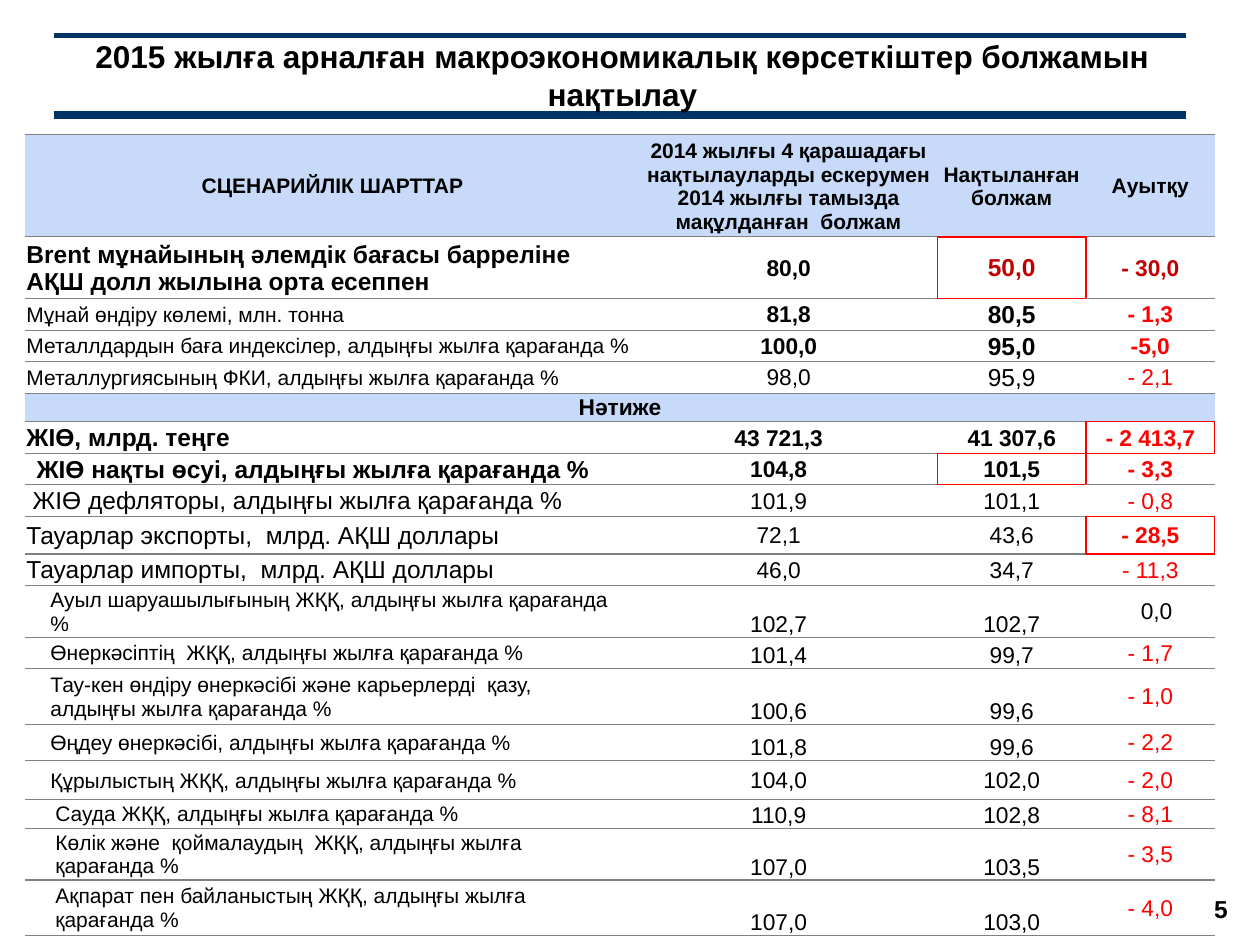
"""Build the slide with the refined 2015 macroeconomic forecast table."""
from lxml.etree import SubElement
from pptx import Presentation
from pptx.dml.color import RGBColor
from pptx.enum.shapes import MSO_CONNECTOR, MSO_SHAPE
from pptx.enum.text import MSO_ANCHOR, PP_ALIGN
from pptx.oxml import parse_xml
from pptx.oxml.ns import nsdecls, qn
from pptx.util import Inches, Pt

NAVY, PALE, WHITE, BLACK = "003366", "C7DAF9", "FFFFFF", "000000"
GREY, RED, DARK_RED = "808080", "FF0000", "C00000"
MIDDLE, BOTTOM = MSO_ANCHOR.MIDDLE, MSO_ANCHOR.BOTTOM


def paint(target, color):
    if hasattr(target, "solid"):
        target.solid()
        target = target.fore_color
    else:
        target = target.color
    target.rgb = RGBColor.from_string(color)


def write(tf, text, size, bold, color=BLACK, align=PP_ALIGN.CENTER):
    tf.text = text
    tf.word_wrap = True
    for p in tf.paragraphs:
        p.alignment = align
        p.font.name, p.font.size, p.font.bold = "Arial", Pt(size), bold
        paint(p.font, color)


prs = Presentation()
prs.slide_width, prs.slide_height = Inches(10), Inches(7.5)
u = prs.slide_width // 1000
s = prs.slides.add_slide(prs.slide_layouts[6])

for y, width in ((91, 4.5), (28, 3)):
    line = s.shapes.add_connector(MSO_CONNECTOR.STRAIGHT, 941 * u, y * u, 43 * u, y * u)
    line.line.width = Pt(width)
    paint(line.line, NAVY)
    SubElement(line._element.spPr, qn("a:effectLst"))

number = s.shapes.add_shape(MSO_SHAPE.RECTANGLE, 939 * u, 694 * u, 60 * u, 55 * u)
number.shadow.inherit = False
number.line.fill.background()
paint(number.fill, WHITE)
number.text_frame.vertical_anchor = MIDDLE
write(number.text_frame, "5", 14, True)

title = s.shapes.add_textbox(43 * u, 31 * u, 902 * u, 57 * u)
title.text_frame.vertical_anchor = MIDDLE
write(title.text_frame,
      "2015 жылға арналған макроэкономикалық көрсеткіштер болжамын нақтылау", 18, True)

columns = [472, 16, 236, 118, 102]
rows = [
    (80, 1, 12, True, True, MIDDLE, "СЦЕНАРИЙЛІК ШАРТТАР",
     ("2014 жылғы 4 қарашадағы нақтылауларды ескерумен 2014 жылғы тамызда мақұлданған  болжам",
      "Нақтыланған\nболжам", "Ауытқу")),
    (49, 1, 14, True, True, MIDDLE,
     "Brent мұнайының әлемдік бағасы барреліне\vАҚШ долл жылына орта есеппен",
     ("80,0", "50,0", "- 30,0")),
    (25, 1, 12, False, True, MIDDLE, "Мұнай өндіру көлемі, млн. тонна",
     ("81,8", "80,5", "- 1,3")),
    (25, 1, 12, False, True, MIDDLE, "Металлдардын баға индексілер, алдыңғы жылға қарағанда %",
     ("100,0", "95,0", "-5,0")),
    (25, 1, 12, False, False, MIDDLE, "Металлургиясының ФКИ, алдыңғы жылға қарағанда %",
     ("98,0", "95,9", "- 2,1")),
    (22, 1, 13, True, True, MIDDLE, "Нәтиже", ()),
    (25, 1, 14, True, True, MIDDLE, "ЖІӨ, млрд. теңге",
     ("43 721,3", "41 307,6", "- 2 413,7")),
    (25, 9, 14, True, True, MIDDLE, "ЖІӨ нақты өсуі, алдыңғы жылға қарағанда %",
     ("104,8", "101,5", "- 3,3")),
    (25, 6, 14, False, False, MIDDLE, "ЖІӨ дефляторы, алдыңғы жылға қарағанда %",
     ("101,9", "101,1", "- 0,8")),
    (30, 1, 14, False, False, MIDDLE, "Тауарлар экспорты,  млрд. АҚШ доллары",
     ("72,1", "43,6", "- 28,5")),
    (25, 1, 14, False, False, MIDDLE, "Тауарлар импорты,  млрд. АҚШ доллары",
     ("46,0", "34,7", "- 11,3")),
    (35, 20, 12, False, False, BOTTOM, "Ауыл шаруашылығының ЖҚҚ, алдыңғы жылға қарағанда %",
     ("102,7", "102,7", "0,0")),
    (25, 20, 12, False, False, BOTTOM, "Өнеркәсіптің  ЖҚҚ, алдыңғы жылға қарағанда %",
     ("101,4", "99,7", "- 1,7")),
    (44, 20, 12, False, False, BOTTOM,
     "Тау-кен өндіру өнеркәсібі және карьерлерді  қазу,\nалдыңғы жылға қарағанда %",
     ("100,6", "99,6", "- 1,0")),
    (29, 20, 12, False, False, BOTTOM, "Өңдеу өнеркәсібі, алдыңғы жылға қарағанда %",
     ("101,8", "99,6", "- 2,2")),
    (31, 20, 12, False, False, MIDDLE, "Құрылыстың ЖҚҚ, алдыңғы жылға қарағанда %",
     ("104,0", "102,0", "- 2,0")),
    (22, 24, 12, False, False, BOTTOM, "Сауда ЖҚҚ, алдыңғы жылға қарағанда %",
     ("110,9", "102,8", "- 8,1")),
    (29, 24, 12, False, False, BOTTOM,
     "Көлік және  қоймалаудың  ЖҚҚ, алдыңғы жылға\nқарағанда %",
     ("107,0", "103,5", "- 3,5")),
    (44, 24, 12, False, False, BOTTOM,
     "Ақпарат пен байланыстың ЖҚҚ, алдыңғы жылға\nқарағанда %",
     ("107,0", "103,0", "- 4,0")),
]
header, brent, result = 0, 1, 5
boxed = {(1, 3), (6, 4), (7, 3), (9, 4)}
sides = {"L": (0, -1), "R": (0, 1), "T": (-1, 0), "B": (1, 0)}

table = s.shapes.add_table(len(rows), len(columns), 20 * u, 107 * u, sum(columns) * u,
                           sum(row[0] for row in rows) * u).table
table.first_row = table.horz_banding = False
for c, width in enumerate(columns):
    table.columns[c].width = width * u

for r, (height, indent, size, label_bold, bold, anchor, label, values) in enumerate(rows):
    table.rows[r].height = height * u
    for c in range(len(columns)):
        cell = table.cell(r, c)
        paint(cell.fill, PALE if r in (header, result) else WHITE)
        cell.vertical_anchor = MIDDLE
        cell.margin_left = cell.margin_right = cell.margin_top = u
        cell.margin_bottom = 0
        for i, (side, (dr, dc)) in enumerate(sides.items()):
            red = (r, c) in boxed or (r + dr, c + dc) in boxed
            color, width = (RED, 1) if red else (GREY, 0.75)
            fill = f'<a:solidFill><a:srgbClr val="{color}"/></a:solidFill>'
            if side in "LR" and not red:
                fill = "<a:noFill/>"
            cell._tc.tcPr.insert(i, parse_xml(
                f'<a:ln{side} {nsdecls("a")} w="{Pt(width)}">{fill}</a:ln{side}>'))

    first, last = (0, 4) if r == result else (0, 1) if r < result else (1, 2)
    table.cell(r, first).merge(table.cell(r, last))
    cell = table.cell(r, 0)
    cell.margin_left = indent * u
    align = PP_ALIGN.CENTER if r in (header, result) else PP_ALIGN.LEFT
    write(cell.text_frame, label, size, label_bold, BLACK, align)

    for c, value in zip((2 if r < result else 1, 3, 4), values):
        cell = table.cell(r, c)
        size = 12 if r == header else 14 if c == 3 and r < result else 13
        color = BLACK
        if r == brent and c > 2:
            color = DARK_RED
        elif c == 4 and value.startswith("-"):
            color = RED
        if c < 4:
            cell.vertical_anchor = anchor
        elif value == "0,0":
            cell.margin_left = 11 * u
        write(cell.text_frame, value, size, bold or (r, c) in boxed, color)

prs.save("out.pptx")
